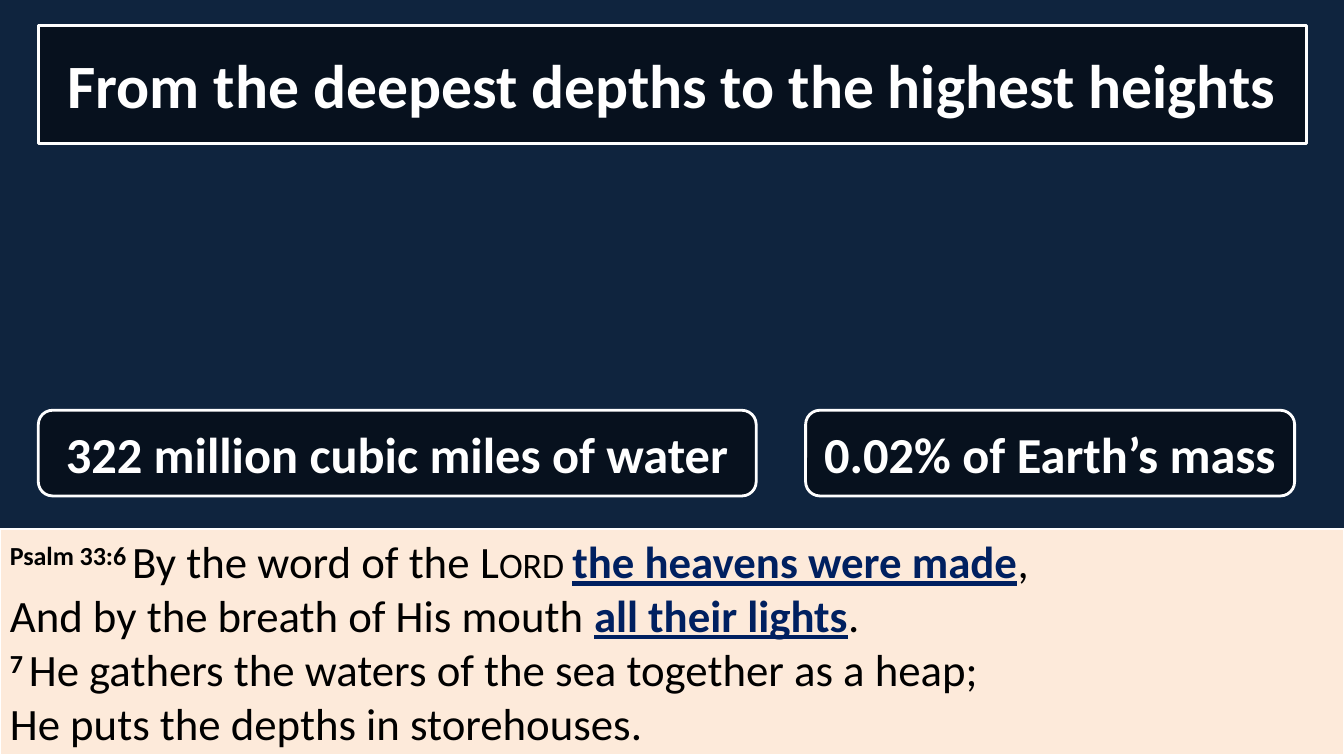
from lxml import etree
from pptx import Presentation
from pptx.dml.color import RGBColor
from pptx.enum import shapes, text
from pptx.oxml import ns
from pptx.util import Inches, Pt

COLORS = {"night": "0F243E", "black": "000000", "white": "FFFFFF",
          "cream": "FDEADA", "navy": "002060"}


def paint(panel, fill, line_width):
    panel.shadow.inherit = False
    panel.fill.solid()
    panel.fill.fore_color.rgb = RGBColor.from_string(COLORS[fill])
    panel.line.color.rgb = RGBColor.from_string(COLORS["white"])
    panel.line.width = Pt(line_width)


def add_words(paragraph, words, size, color, **formats):
    run = paragraph.add_run()
    run.text = words
    run.font.color.rgb = RGBColor.from_string(COLORS[color])
    for name, value in {"name": "Calibri", "size": Pt(size), **formats}.items():
        setattr(run.font, name, value)
    return run


deck = Presentation()
deck.slide_width, deck.slide_height = Inches(13.33), Inches(7.5)
slide = deck.slides.add_slide(deck.slide_layouts[5])
slide.background.fill.solid()
slide.background.fill.fore_color.rgb = RGBColor.from_string(COLORS["night"])

headline = slide.shapes.title
banners = [
    ("From the deepest depths to the highest heights", 44, 0.38, 0.25, 12.58, 1.17),
    ("322 million cubic miles of water", 36, 0.38, 4.07, 7.12, 0.85),
    ("0.02% of Earth’s mass", 36, 7.99, 4.07, 4.85, 0.85),
]
for words, size, *box in banners:
    left, top, width, height = map(Inches, box)
    if size == 44:
        banner = headline
        banner.left, banner.top, banner.width, banner.height = left, top, width, height
        outline = etree.SubElement(banner.element.spPr, ns.qn("a:prstGeom"), prst="roundRect")
        etree.SubElement(outline, ns.qn("a:avLst"))
    else:
        banner = slide.shapes.add_shape(
            shapes.MSO_SHAPE.ROUNDED_RECTANGLE, left, top, width, height)
    paint(banner, "black", 2)
    tint = banner.element.spPr.find(ns.qn("a:solidFill"))[0]
    etree.SubElement(tint, ns.qn("a:alpha"), val="50000")
    frame = banner.text_frame
    frame.word_wrap = True
    frame.auto_size = text.MSO_AUTO_SIZE.NONE
    frame.vertical_anchor = text.MSO_ANCHOR.MIDDLE
    frame.paragraphs[0].alignment = text.PP_ALIGN.CENTER
    add_words(frame.paragraphs[0], words, size, "white", bold=True)

passage = slide.shapes.add_shape(
    shapes.MSO_SHAPE.RECTANGLE, Inches(0), Inches(5.25), Inches(13.33), Inches(2.24))
paint(passage, "cream", 1.5)
passage.text_frame.word_wrap = True
passage.text_frame.vertical_anchor = text.MSO_ANCHOR.TOP
verse = passage.text_frame.paragraphs[0]
verse.alignment = text.PP_ALIGN.LEFT

styles = {
    "plain": {"color": "black", "bold": False},
    "number": {"color": "black", "bold": True},
    "small caps": {"color": "black", "bold": False},
    "key": {"color": "navy", "bold": True, "underline": True},
}
extras = {"number": ("baseline", "30000"), "small caps": ("cap", "small")}
verse_lines = [
    [("Psalm 33:6 ", "number"), ("By the word of the ", "plain"), ("Lord ", "small caps"),
     ("the heavens were made", "key"), (",", "plain")],
    [("And by the breath of His mouth ", "plain"), ("all their lights", "key"), (".", "plain")],
    [("7 ", "number"), ("He gathers the waters of the sea together as a heap;", "plain")],
    [("He puts the depths in storehouses.", "plain")],
]
for index, verse_line in enumerate(verse_lines):
    if index:
        verse.add_line_break()
    for words, style in verse_line:
        run = add_words(verse, words, 32, **styles[style])
        if style in extras:
            run.font._element.set(*extras[style])

deck.save("out.pptx")
